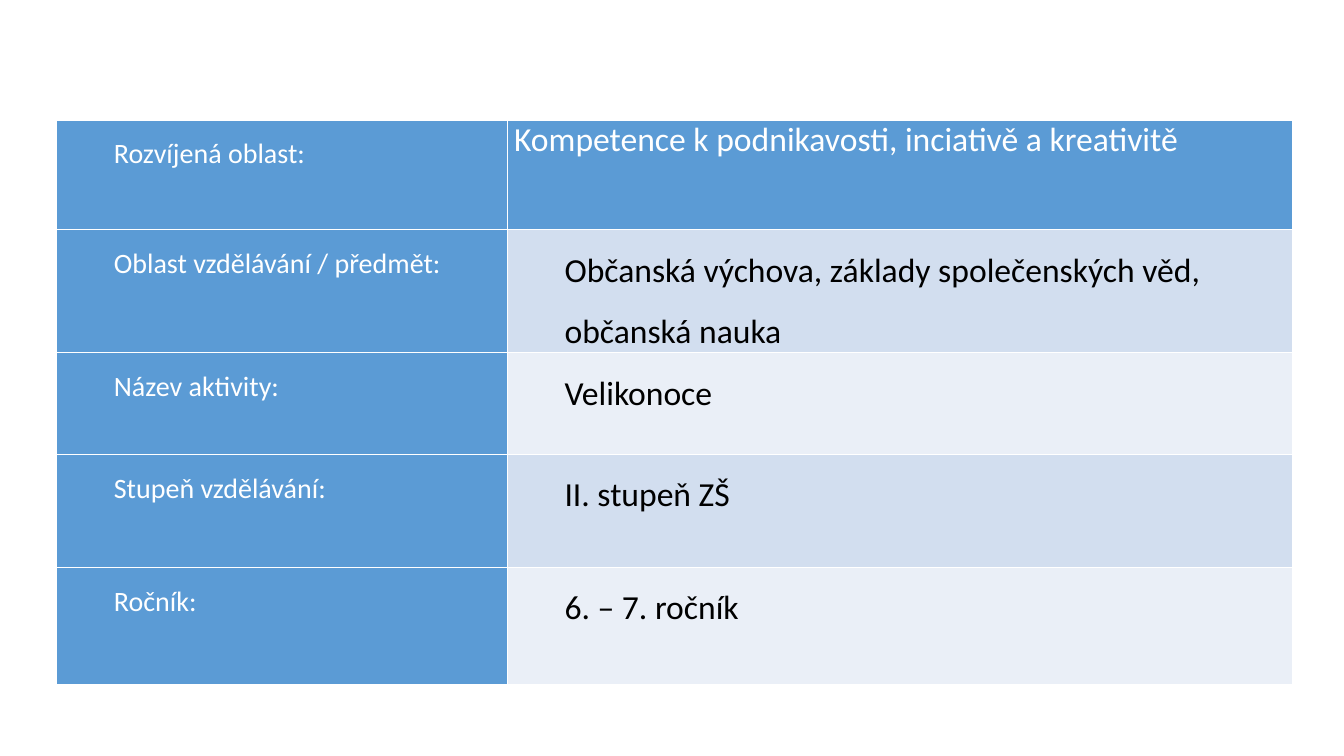
from lxml import etree
from pptx import Presentation
from pptx import util as u
from pptx.dml.color import RGBColor
from pptx.oxml import ns

ROWS = [
    ("Rozvíjená oblast:", "Kompetence k podnikavosti, inciativě a kreativitě", 1.09),
    ("Oblast vzdělávání / předmět:",
     "Občanská výchova, základy společenských věd, občanská nauka", 1.01),
    ("Název aktivity:", "Velikonoce", 1.01),
    ("Stupeň vzdělávání:", "II. stupeň ZŠ", 1.12),
    ("Ročník:", "6. – 7. ročník", 1.16),
]
COLUMNS = (4.47, 7.79)
SIZES = (20, 24)
LEFT, TOP = 0.56, 1.19
BLUE = RGBColor(0x5B, 0x9B, 0xD5)
BANDS = (RGBColor(0xEA, 0xEF, 0xF7), RGBColor(0xD2, 0xDE, 0xEF))
WHITE = RGBColor(0xFF, 0xFF, 0xFF)
BLACK = RGBColor(0, 0, 0)


def add_borders(cell):
    tc_pr = cell._tc.get_or_add_tcPr()
    for side in ("lnL", "lnR", "lnT", "lnB"):
        ln = etree.SubElement(tc_pr, ns.qn("a:" + side), w=str(u.Pt(1)))
        fill = etree.SubElement(ln, ns.qn("a:solidFill"))
        etree.SubElement(fill, ns.qn("a:srgbClr"), val=str(WHITE))


def fill_cell(cell, value, row, col):
    heading = row == 0 or col == 0
    cell.margin_left = cell.margin_right = u.Inches(0.07)
    cell.margin_top = cell.margin_bottom = 0
    add_borders(cell)
    cell.fill.solid()
    cell.fill.fore_color.rgb = BLUE if heading else BANDS[row % 2]
    p = cell.text_frame.paragraphs[0]
    p.text = value
    if (row, col) != (0, 1):
        p.line_spacing = 1.5
        p._p.get_or_add_pPr().set("marL", str(u.Inches(0.5)))
    font = p.runs[0].font
    font.name = "Calibri"
    font.size = u.Pt(SIZES[col])
    font.bold = False
    font.color.rgb = WHITE if heading else BLACK


def main():
    prs = Presentation()
    prs.slide_width, prs.slide_height = u.Inches(13.33), u.Inches(7.5)
    s = prs.slides.add_slide(prs.slide_layouts[6])
    height = sum(row[2] for row in ROWS)
    table = s.shapes.add_table(
        len(ROWS), len(COLUMNS), u.Inches(LEFT), u.Inches(TOP),
        u.Inches(sum(COLUMNS)), u.Inches(height)).table
    table.first_row = table.horz_banding = False
    for column, width in zip(table.columns, COLUMNS):
        column.width = u.Inches(width)
    for row, (label, value, row_height) in enumerate(ROWS):
        table.rows[row].height = u.Inches(row_height)
        for col, content in enumerate((label, value)):
            fill_cell(table.cell(row, col), content, row, col)
    prs.save("out.pptx")


if __name__ == "__main__":
    main()
